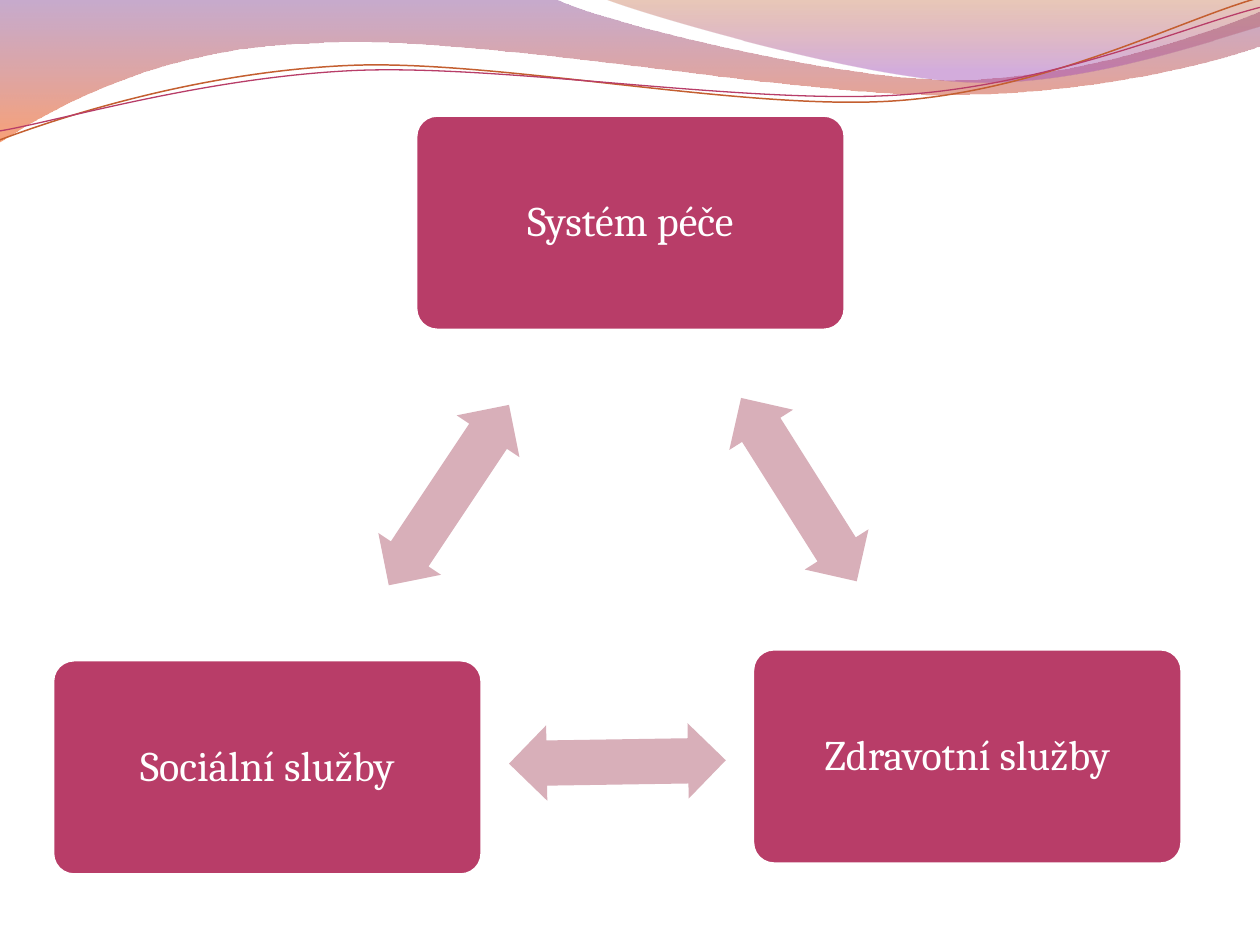
from math import atan2, degrees
from lxml.etree import SubElement
from pptx import Presentation
from pptx.dml.color import RGBColor
from pptx.enum.shapes import MSO_SHAPE as Kind
from pptx.enum.text import MSO_ANCHOR as Anchor, PP_ALIGN as Align
from pptx.oxml.ns import qn
from pptx.oxml.xmlchemy import OxmlElement as Tag
from pptx.util import Cm, Pt

ROSE, PINK, WHITE = "B83D68", "D8AFB9", "FFFFFF"
BOX, ARROW = (8.66, 4.34), (4.37, 1.52)
NODES = [
    ("Systém péče", 12.71, 4.49),
    ("Zdravotní služby", 19.5, 15.25),
    ("Sociální služby", 5.39, 15.47),
]
WAVES = [
    ([(0, 0), (11.18, -0.03),
      (12.09, 0.43, 16.87, 1.6, 19.25, 1.6), (21.67, 1.6, 24.33, 0.66, 25.4, 0.23),
      (25.43, 0.91),
      (24.97, 1.12, 22.1, 1.93, 18.95, 1.91), (15.8, 1.91, 9.7, 0.71, 6.53, 0.86),
      (3.28, 0.91, 1.17, 2.11, -0.03, 2.87)],
     [(0, "834591", 45), (1, "F35307", 55)]),
    ([(12.17, -0.03),
      (12.93, 0.28, 17.32, 1.57, 19.53, 1.65), (21.74, 1.75, 24.41, 0.81, 25.4, 0.53),
      (25.4, 0)],
     [(0, "B74915", 30), (0.8, "A14BB4", 45)]),
]
LINES = [
    ([(0, 2.82), (1.22, 2.36, 4.01, 1.45, 7.04, 1.32),
      (10.03, 1.19, 15.06, 2.26, 18.11, 2.03),
      (21.16, 1.8, 23.83, 0.38, 25.4, -0.05)], "C45F30", 0.85),
    ([(0, 2.64), (1.19, 2.44, 4.17, 1.55, 7.19, 1.42),
      (10.24, 1.3, 15.16, 2.13, 18.21, 1.91),
      (21.23, 1.7, 23.9, 0.53, 25.4, 0.15)], "B83D68", 0.75),
]


def rgb(code):
    """Turn a hex string into a colour."""
    return RGBColor.from_string(code)


def draw(slide, steps, close):
    """Add a freeform whose six-number steps are cubic curves."""
    pts = [(Cm(x), Cm(y)) for step in steps for x, y in zip(step[::2], step[1::2])]
    pen = slide.shapes.build_freeform(*pts[0])
    pen.add_line_segments(pts[1:], close=close)
    shape = pen.convert_to_shape()
    shape.shadow.inherit = False
    legs = iter(list(shape._element.spPr.iter(qn("a:lnTo"))))
    for step in steps[1:]:
        part = [next(legs) for _ in step[::2]]
        if len(part) == 3:
            curve = Tag("a:cubicBezTo")
            part[0].addprevious(curve)
            for leg in part:
                curve.append(leg[0])
                leg.getparent().remove(leg)
    return shape


def wave(slide, steps, stops):
    """Add a wave with a see-through gradient from top to bottom."""
    shape = draw(slide, steps, True)
    shape.line.fill.background()
    fill = shape.fill
    fill.gradient()
    fill.gradient_angle = 270
    for stop, (pos, code, _) in zip(fill.gradient_stops, stops):
        stop.position = pos
        stop.color.rgb = rgb(code)
    tags = shape._element.spPr.iter(qn("a:srgbClr"))
    for tag, (_, _, alpha) in zip(list(tags), stops):
        SubElement(tag, qn("a:alpha")).set("val", str(alpha * 1000))


def block(slide, kind, mid, size, fill, adj):
    """Add a filled preset shape around its centre."""
    (x, y), (w, h) = mid, size
    shape = slide.shapes.add_shape(kind, Cm(x - w / 2), Cm(y - h / 2), Cm(w), Cm(h))
    shape.shadow.inherit = False
    shape.fill.solid()
    shape.fill.fore_color.rgb = rgb(fill)
    shape.line.fill.background()
    for i, val in enumerate(adj):
        shape.adjustments[i] = val
    return shape


def write(shape, text, size=24, font="Cambria", color=WHITE, align=Align.CENTER):
    """Put formatted text in a shape."""
    frame = shape.text_frame
    frame.word_wrap = True
    frame.vertical_anchor = Anchor.MIDDLE
    para = frame.paragraphs[0]
    para.alignment = align
    para.line_spacing = 0.9
    run = para.add_run()
    run.text = text
    run.font.size = Pt(size)
    run.font.name = font
    run.font.color.rgb = rgb(color)


def main():
    """Build the slide."""
    prs = Presentation()
    prs.slide_width, prs.slide_height = Cm(25.4), Cm(19.05)
    slide = prs.slides.add_slide(prs.slide_layouts[6])
    for steps, stops in WAVES:
        wave(slide, steps, stops)
    for steps, code, width in LINES:
        line = draw(slide, steps, False)
        line.fill.background()
        line.line.color.rgb = rgb(code)
        line.line.width = Pt(width)
    for (text, x, y), (_, nx, ny) in zip(NODES, NODES[1:] + NODES[:1]):
        box = block(slide, Kind.ROUNDED_RECTANGLE, (x, y), BOX, ROSE, [0.1])
        box.line.color.rgb = rgb(WHITE)
        box.line.width = Pt(2)
        write(box, text)
        mid = ((x + nx) / 2, (y + ny) / 2)
        arrow = block(slide, Kind.LEFT_RIGHT_ARROW, mid, ARROW, PINK, [0.6, 0.5])
        arrow.rotation = degrees(atan2(ny - y, nx - x)) % 360
    prs.save("out.pptx")


if __name__ == "__main__":
    main()
